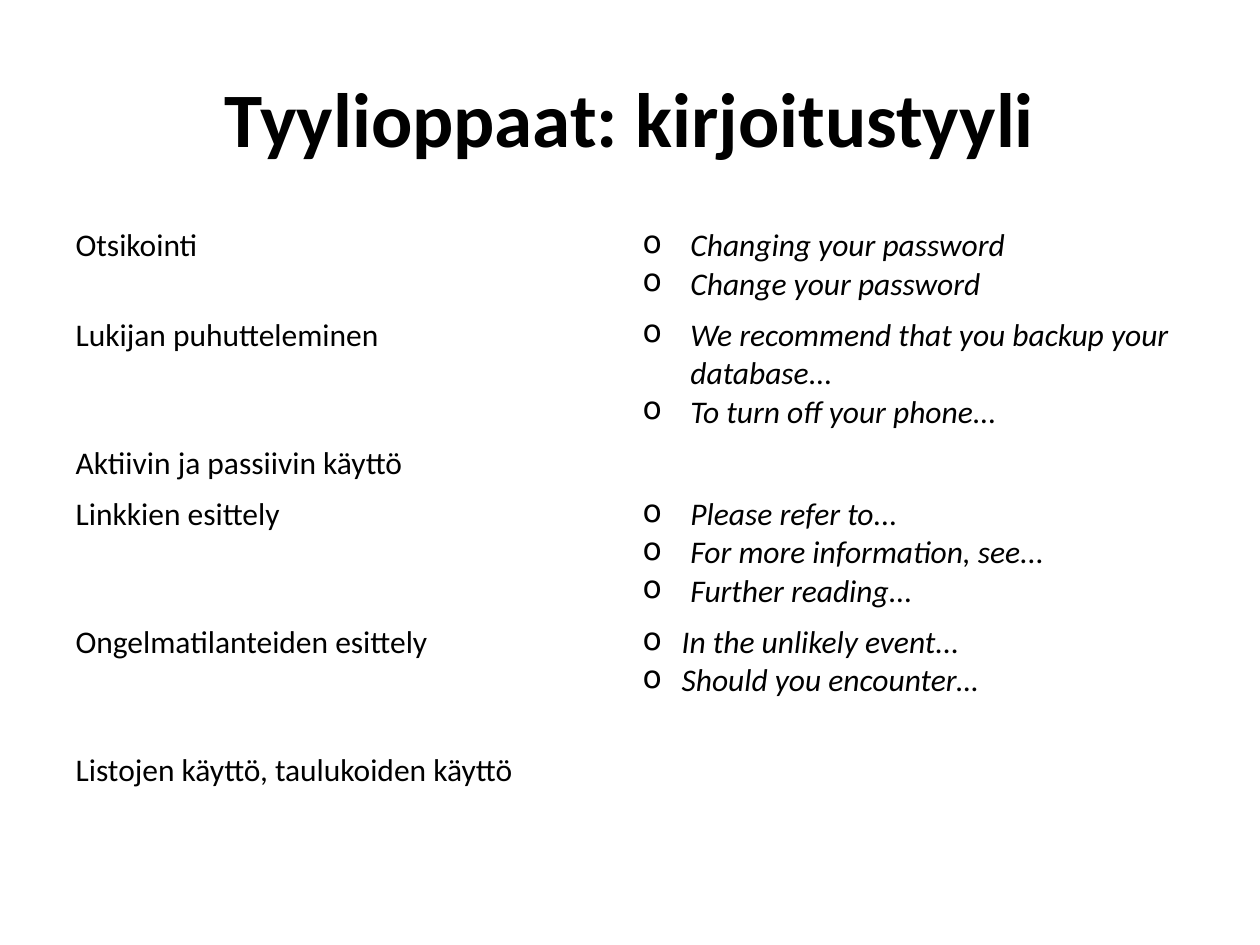
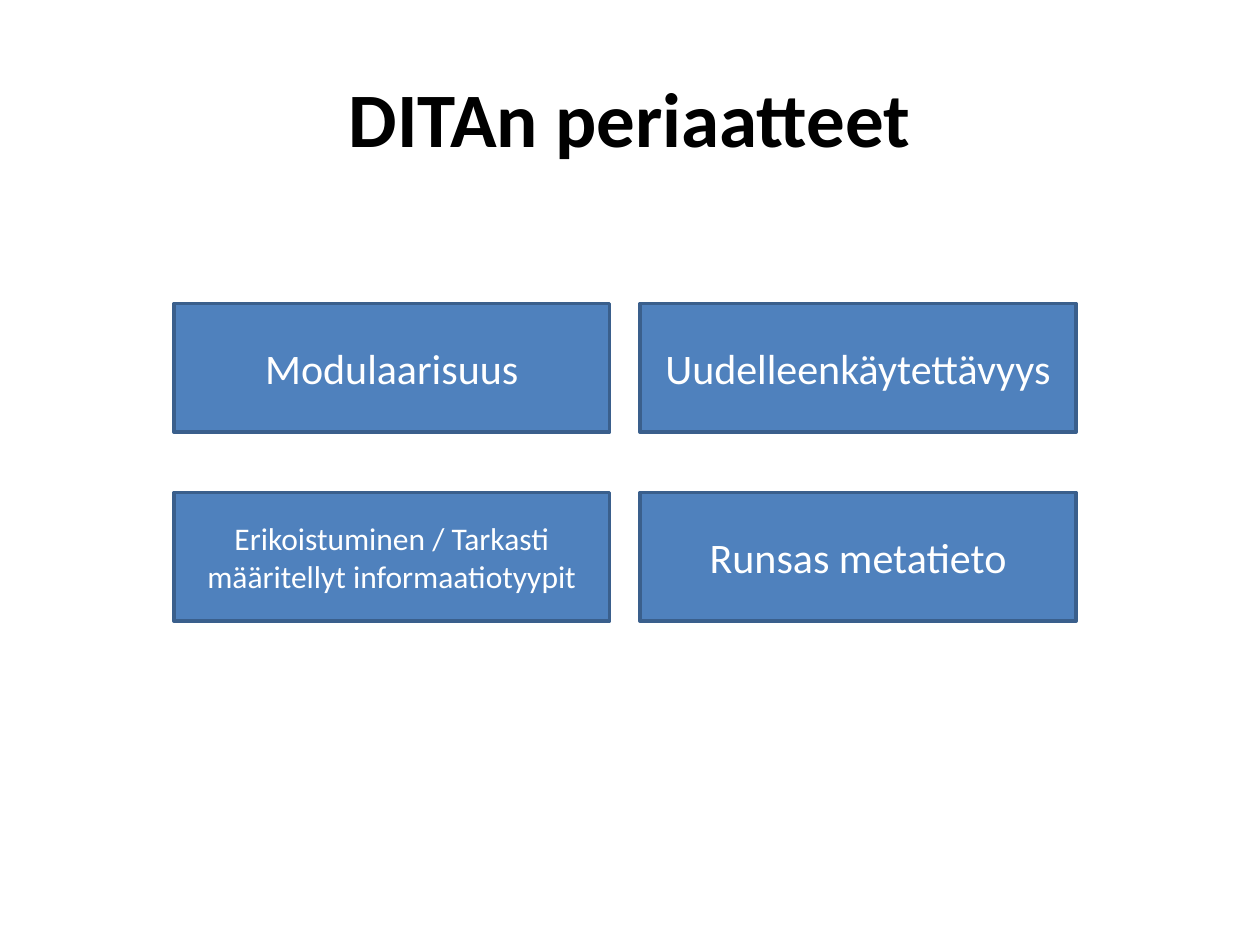
import pptx
import pptx.util
import pptx.dml.color
import pptx.enum.shapes
import pptx.enum.text
import pptx.oxml.ns
import lxml.etree

Inches = pptx.util.Inches
CENTER = pptx.enum.text.PP_ALIGN.CENTER
MIDDLE = pptx.enum.text.MSO_ANCHOR.MIDDLE


def color(hex_code):
    return pptx.dml.color.RGBColor.from_string(hex_code)


def write(paragraph, text, size=18, ink="000000", bold=False, italic=False,
          align=None, hanging=None):
    """Fill a paragraph; hanging is the indent in inches of an "o" bullet."""
    run = paragraph.add_run()
    run.text = text
    font = run.font
    font.name, font.size = "Calibri", pptx.util.Pt(size)
    font.bold, font.italic = bold, italic
    font.color.rgb = color(ink)
    if align is not None:
        paragraph.alignment = align
    if hanging:
        paragraph.level = 1
        properties = paragraph._p.get_or_add_pPr()
        properties.set("marL", str(Inches(hanging)))
        properties.set("indent", str(-Inches(hanging)))
        bullet = lxml.etree.SubElement(properties, pptx.oxml.ns.qn("a:buChar"))
        bullet.set("char", "o")


class Deck:
    BOX_FILL, BOX_LINE = "4F81BD", "3A5F8C"
    LINE_HEIGHT, CELL_PADDING = 0.305, 0.1

    def __init__(self):
        self.presentation = pptx.Presentation()
        self.presentation.slide_width = Inches(10)
        self.presentation.slide_height = Inches(7.5)
        self.slide = None

    def add_slide(self, heading):
        title_only = self.presentation.slide_layouts[5]
        self.slide = self.presentation.slides.add_slide(title_only)
        title = self.slide.shapes.title
        title.left, title.top = Inches(0.5), Inches(0.3)
        title.width, title.height = Inches(9), Inches(1.25)
        title.text_frame.vertical_anchor = MIDDLE
        write(title.text_frame.paragraphs[0], heading, size=44, bold=True, align=CENTER)

    def topic_table(self, rows, left, top, width):
        """Each row is topic, examples, bullet indent and height in lines."""
        heights = [Inches(self.CELL_PADDING + self.LINE_HEIGHT * row[3]) for row in rows]
        table = self.slide.shapes.add_table(
            len(rows), 2, Inches(left), Inches(top), Inches(width), sum(heights)).table
        table.first_row = table.horz_banding = False
        for table_row, height, (topic, examples, hanging, _) in zip(table.rows, heights, rows):
            table_row.height = height
            topic_cell, example_cell = table_row.cells
            for cell in (topic_cell, example_cell):
                cell.fill.background()
            if topic:
                write(topic_cell.text_frame.paragraphs[0], topic)
            frame = example_cell.text_frame
            for index, example in enumerate(examples):
                paragraph = frame.add_paragraph() if index else frame.paragraphs[0]
                write(paragraph, example, italic=True, hanging=hanging)

    def box(self, text, left, top, width, height, size):
        box = self.slide.shapes.add_shape(
            pptx.enum.shapes.MSO_SHAPE.RECTANGLE,
            Inches(left), Inches(top), Inches(width), Inches(height))
        box.shadow.inherit = False
        box.fill.solid()
        box.fill.fore_color.rgb = color(self.BOX_FILL)
        box.line.color.rgb = color(self.BOX_LINE)
        box.line.width = pptx.util.Pt(2)
        box.text_frame.word_wrap = True
        box.text_frame.vertical_anchor = MIDDLE
        write(box.text_frame.paragraphs[0], text, size=size, ink="FFFFFF", align=CENTER)


def main():
    deck = Deck()

    # Style guides: topics with example phrasings
    deck.add_slide("Tyylioppaat: kirjoitustyyli")
    deck.topic_table([
        ("Otsikointi", ["Changing your password", "Change your password"], 0.38, 2),
        ("Lukijan puhutteleminen",
         ["We recommend that you backup your database...", "To turn off your phone..."],
         0.38, 3),
        ("Aktiivin ja passiivin käyttö", [], None, 1),
        ("Linkkien esittely",
         ["Please refer to...", "For more information, see...", "Further reading..."],
         0.38, 3),
        ("Ongelmatilanteiden esittely",
         ["In the unlikely event...", "Should you encounter…"], 0.31, 3),
        ("Listojen käyttö, taulukoiden käyttö", [], None, 1),
        ("", [], None, 1),
    ], left=0.5, top=1.75, width=9)

    # DITA principles: two by two grid
    deck.add_slide("DITAn periaatteet")
    principles = [
        ("Modulaarisuus", 24),
        ("Uudelleenkäytettävyys", 24),
        ("Erikoistuminen / Tarkasti määritellyt informaatiotyypit", 18),
        ("Runsas metatieto", 24),
    ]
    for index, (principle, size) in enumerate(principles):
        row, column = divmod(index, 2)
        deck.box(principle, 1.38 + 3.7 * column, 2.41 + 1.5 * row, 3.46, 1.02, size)

    deck.presentation.save("out.pptx")


if __name__ == "__main__":
    main()
